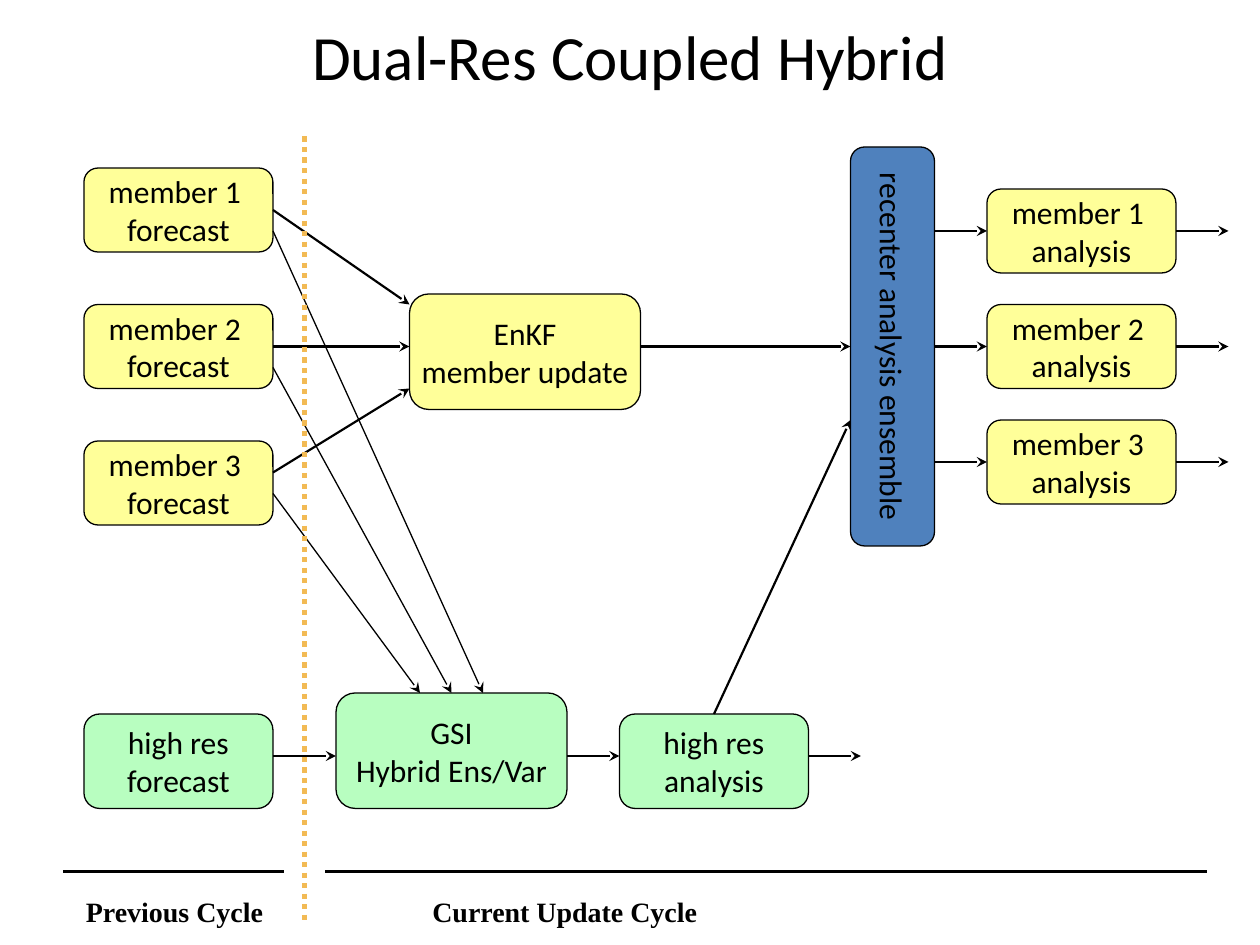
from lxml.etree import SubElement
from pptx import Presentation
from pptx.dml.color import RGBColor
from pptx.enum.dml import MSO_LINE
from pptx.enum.shapes import MSO_CONNECTOR, MSO_SHAPE
from pptx.enum.text import MSO_ANCHOR, MSO_AUTO_SIZE, PP_ALIGN
from pptx.oxml.ns import qn
from pptx.util import Pt

PX = 7620
INK = {"black": "000000", "yellow": "FFFF99", "green": "B8FEC0",
       "blue": "4F81BD", "orange": "F2BA54"}

TITLE = "Dual-Res Coupled Hybrid"
FORECASTS = [160, 290, 420]
ANALYSES = [180, 290, 400]
BOXES = [
    ("EnKF\nmember update", 390, 280, 220, 110, "yellow"),
    ("high res\nforecast", 80, 680, 180, 90, "green"),
    ("GSI\nHybrid Ens/Var", 320, 660, 220, 110, "green"),
    ("high res\nanalysis", 590, 680, 180, 90, "green"),
]
for num, (old, new) in enumerate(zip(FORECASTS, ANALYSES), 1):
    BOXES.append((f"member {num} \nforecast", 80, old, 180, 80, "yellow"))
    BOXES.append((f"member {num} \nanalysis", 940, new, 180, 80, "yellow"))
CENTER = ("recenter analysis ensemble", 660, 290, 380, 80, "blue")

THICK, THIN = 1.25, 0.75
ARROWS = [
    (260, 200, 390, 290, THICK),
    (260, 330, 390, 330, THICK),
    (260, 450, 390, 370, THICK),
    (260, 220, 460, 660, THIN),
    (260, 350, 430, 660, THIN),
    (260, 470, 400, 660, THIN),
    (260, 720, 320, 720, THICK),
    (540, 720, 590, 720, THICK),
    (770, 720, 820, 720, THICK),
    (680, 680, 810, 400, THICK),
    (610, 330, 810, 330, THICK),
]
for top in ANALYSES:
    for left in (890, 1120):
        ARROWS.append((left, top + 40, left + 50, top + 40, THICK))
RULES = [(60, 830, 270, 830), (310, 830, 1150, 830)]
CYCLES = [("Previous Cycle", 70, 220), ("Current Update Cycle", 400, 290)]


def tint(name):
    return RGBColor.from_string(INK[name])


def style(frame, size, font="Calibri", bold=False, align=PP_ALIGN.CENTER):
    for para in frame.paragraphs:
        para.alignment = align
        for run in para.runs:
            run.font.size = Pt(size)
            run.font.name = font
            run.font.bold = bold
            run.font.color.rgb = tint("black")


def add_box(text, x, y, w, h, fill, kind=MSO_SHAPE.FLOWCHART_ALTERNATE_PROCESS):
    box = slide.shapes.add_shape(kind, x * PX, y * PX, w * PX, h * PX)
    box.shadow.inherit = False
    box.fill.solid()
    box.fill.fore_color.rgb = tint(fill)
    box.line.color.rgb = tint("black")
    box.line.width = Pt(0.75)
    frame = box.text_frame
    frame.text = text
    frame.word_wrap = False
    frame.vertical_anchor = MSO_ANCHOR.MIDDLE
    style(frame, 18)
    return box


def add_line(x1, y1, x2, y2, width, color="black"):
    ends = [v * PX for v in (x1, y1, x2, y2)]
    line = slide.shapes.add_connector(MSO_CONNECTOR.STRAIGHT, *ends)
    line.line.color.rgb = tint(color)
    line.line.width = Pt(width)
    SubElement(line._element.spPr, qn("a:effectLst"))
    return line


def add_arrow(x1, y1, x2, y2, width):
    line = add_line(x1, y1, x2, y2, width)
    SubElement(line.line._get_or_add_ln(), qn("a:tailEnd"), type="stealth")
    if (x1, y1) in sites:
        line.begin_connect(*sites[x1, y1])
    if (x2, y2) in sites:
        line.end_connect(*sites[x2, y2])
    line.begin_x, line.begin_y = x1 * PX, y1 * PX
    line.end_x, line.end_y = x2 * PX, y2 * PX


deck = Presentation()
deck.slide_width, deck.slide_height = 1200 * PX, 900 * PX
slide = deck.slides.add_slide(deck.slide_layouts[5])

title = slide.shapes.title
title.left, title.top = 60 * PX, 6 * PX
title.width, title.height = 1080 * PX, 94 * PX
title.text_frame.text = TITLE
title.text_frame.vertical_anchor = MSO_ANCHOR.MIDDLE
style(title.text_frame, 36)

sites = {}
for text, x, y, w, h, fill in BOXES:
    box = add_box(text, x, y, w, h, fill)
    mids = [(x + w // 2, y), (x, y + h // 2),
            (x + w // 2, y + h), (x + w, y + h // 2)]
    for side, spot in enumerate(mids):
        sites[spot] = box, side

center = add_box(*CENTER, MSO_SHAPE.ROUNDED_RECTANGLE)
center.rotation = 90
sites[810, 330] = center, 2
sites[890, 330] = center, 0

for arrow in ARROWS:
    add_arrow(*arrow)
for rule in RULES:
    add_line(*rule, 2.25)
split = add_line(290, 130, 290, 880, 3, "orange")
split.line.dash_style = MSO_LINE.ROUND_DOT

for text, x, w in CYCLES:
    label = slide.shapes.add_textbox(x * PX, 846 * PX, w * PX, 44 * PX)
    frame = label.text_frame
    frame.text = text
    frame.word_wrap = True
    frame.auto_size = MSO_AUTO_SIZE.SHAPE_TO_FIT_TEXT
    style(frame, 16, "Times New Roman", True, PP_ALIGN.LEFT)

deck.save("out.pptx")
